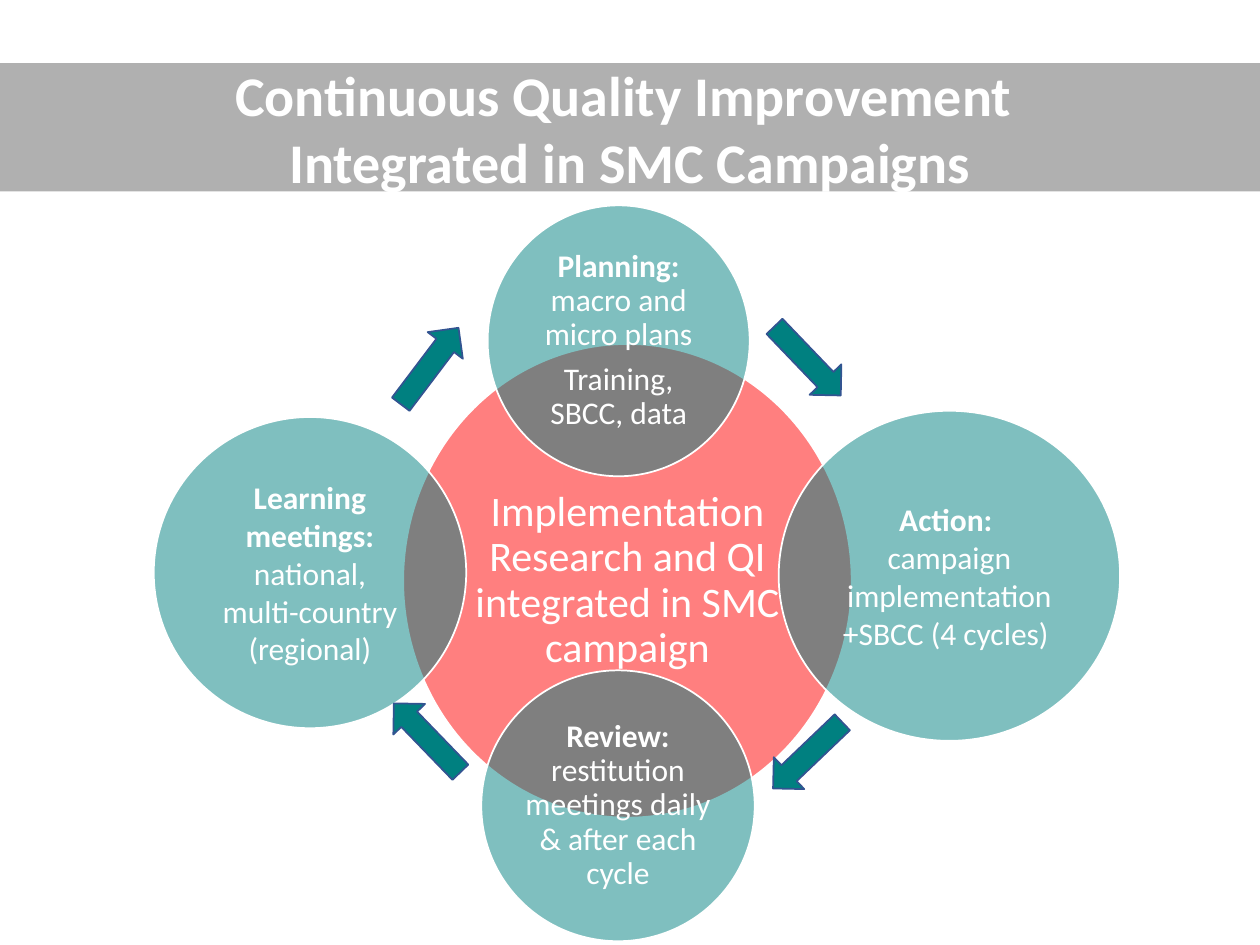
from lxml import etree
from pptx import Presentation
from pptx.dml.color import RGBColor
from pptx.enum.shapes import MSO_SHAPE as Shape
from pptx.enum.text import MSO_ANCHOR as Anchor, MSO_AUTO_SIZE as AutoSize, PP_ALIGN as Align
from pptx.oxml.ns import qn
from pptx.util import Inches, Pt

FONT = "Calibri"
COLORS = {"white": "FFFFFF", "core": "FF0000", "stage": "008080",
          "band": "808080", "arrow_edge": "325491"}

TITLE = [[("Continuous Quality Improvement ", True)],
         [("Integrated in SMC Campaigns", True)]]

# Circles: box, colour, text size, line spacing, space after, paragraphs of (text, bold)
CIRCLES = [
    ((3.2, 2.73, 3.56, 3.76), "core", 24, 0.9, 8.4,
     [[("Implementation Research and QI integrated in SMC campaign", False)]]),
    ((3.87, 1.63, 2.08, 2.15), "stage", 18, 0.9, 6.3,
     [[("Planning:", True), (" macro and micro plans", False)],
      [("Training, SBCC, data", False)]]),
    ((6.18, 3.26, 2.71, 2.62), "stage", 18, 1, 0,
     [[("Action: ", True)],
      [("campaign implementation +SBCC (4 cycles) ", False)]]),
    ((3.82, 5.32, 2.17, 2.15), "stage", 18, 0.9, 0,
     [[("Review:", True)],
      [("restitution meetings daily & after each cycle", False)]]),
    ((1.22, 3.31, 2.48, 2.47), "stage", 18, 1, 0,
     [[("Learning", True)],
      [("meetings:", True)],
      [("national,", False)],
      [("multi-country (regional)", False)]]),
]

ARROW_SIZE = (0.76, 0.35)
ARROWS = [(6.03, 2.69, 46.2), (6.03, 5.82, 136.3),
          (3.01, 5.68, 226), (3.03, 2.73, 307.1)]  # left, top, rotation


def rgb(name):
    return RGBColor.from_string(COLORS[name])


def paint(shape, color, opacity=100):
    shape.fill.solid()
    shape.fill.fore_color.rgb = rgb(color)
    if opacity < 100:
        tint = shape.fill._xPr.find(qn("a:solidFill"))[0]
        etree.SubElement(tint, qn("a:alpha"), val=str(opacity * 1000))


def outline(shape, color):
    shape.line.color.rgb = rgb(color)
    shape.line.width = Pt(1)


def write(frame, paragraphs, size, line_spacing=1, space_after=0):
    frame.word_wrap = True
    frame.auto_size = AutoSize.NONE
    frame.vertical_anchor = Anchor.MIDDLE
    for index, pieces in enumerate(paragraphs):
        paragraph = frame.add_paragraph() if index else frame.paragraphs[0]
        paragraph.alignment = Align.CENTER
        paragraph.line_spacing = line_spacing
        paragraph.space_before = Pt(0)
        paragraph.space_after = Pt(space_after)
        for text, bold in pieces:
            run = paragraph.add_run()
            run.text = text
            run.font.name = FONT
            run.font.size = Pt(size)
            run.font.bold = bold
            run.font.color.rgb = rgb("white")


def add_shape(slide, kind, box):
    shape = slide.shapes.add_shape(kind, *map(Inches, box))
    shape.shadow.inherit = False
    return shape


def main():
    deck = Presentation()
    deck.slide_width, deck.slide_height = Inches(10), Inches(7.5)
    slide = deck.slides.add_slide(deck.slide_layouts[5])

    title = slide.shapes.title
    title.left, title.top, title.width, title.height = map(Inches, (0, 0.5, 10, 1.02))
    paint(title, "band", 62)
    write(title.text_frame, TITLE, 32)

    for box, color, size, line_spacing, space_after, paragraphs in CIRCLES:
        circle = add_shape(slide, Shape.OVAL, box)
        paint(circle, color, 50)
        outline(circle, "white")
        frame = circle.text_frame
        frame.margin_left = frame.margin_right = Inches(0.03)
        frame.margin_top = frame.margin_bottom = Inches(0.03)
        write(frame, paragraphs, size, line_spacing, space_after)

    for left, top, rotation in ARROWS:
        arrow = add_shape(slide, Shape.RIGHT_ARROW, (left, top, *ARROW_SIZE))
        arrow.rotation = rotation
        paint(arrow, "stage")
        outline(arrow, "arrow_edge")

    deck.save("out.pptx")


if __name__ == "__main__":
    main()
